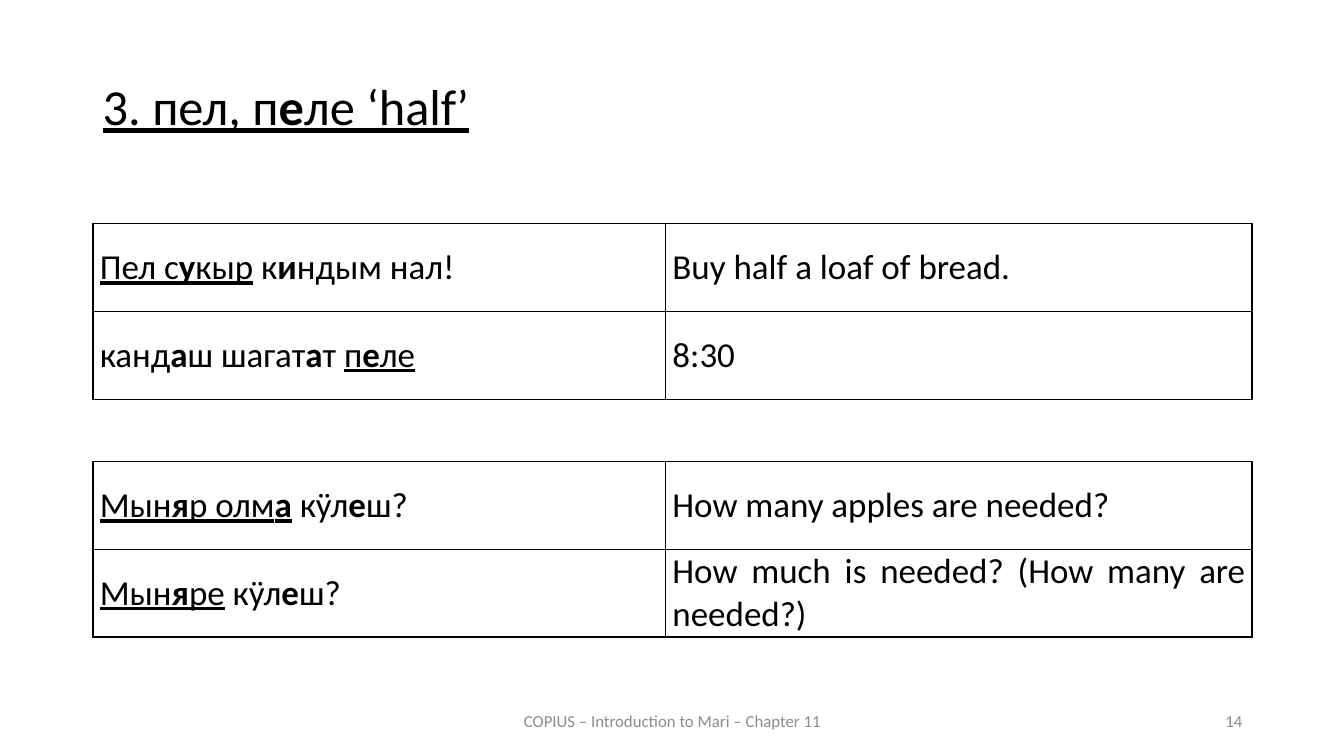
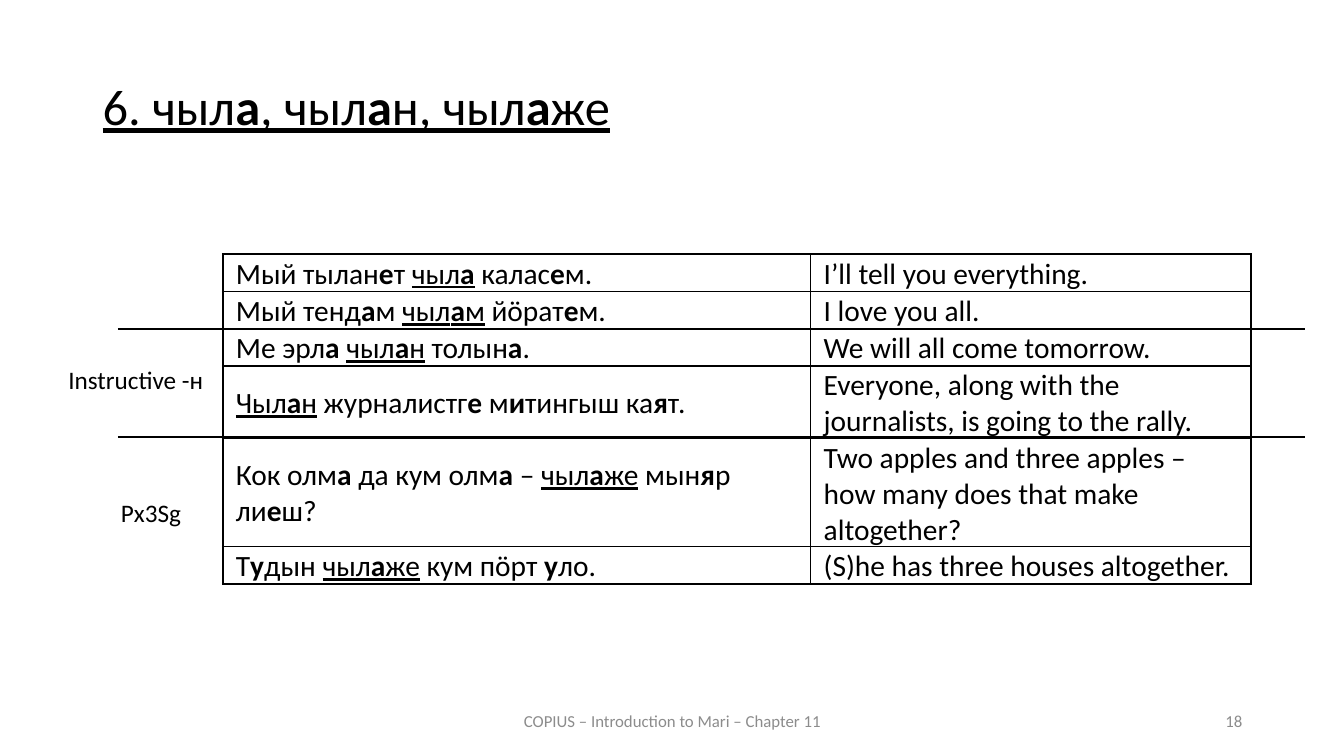
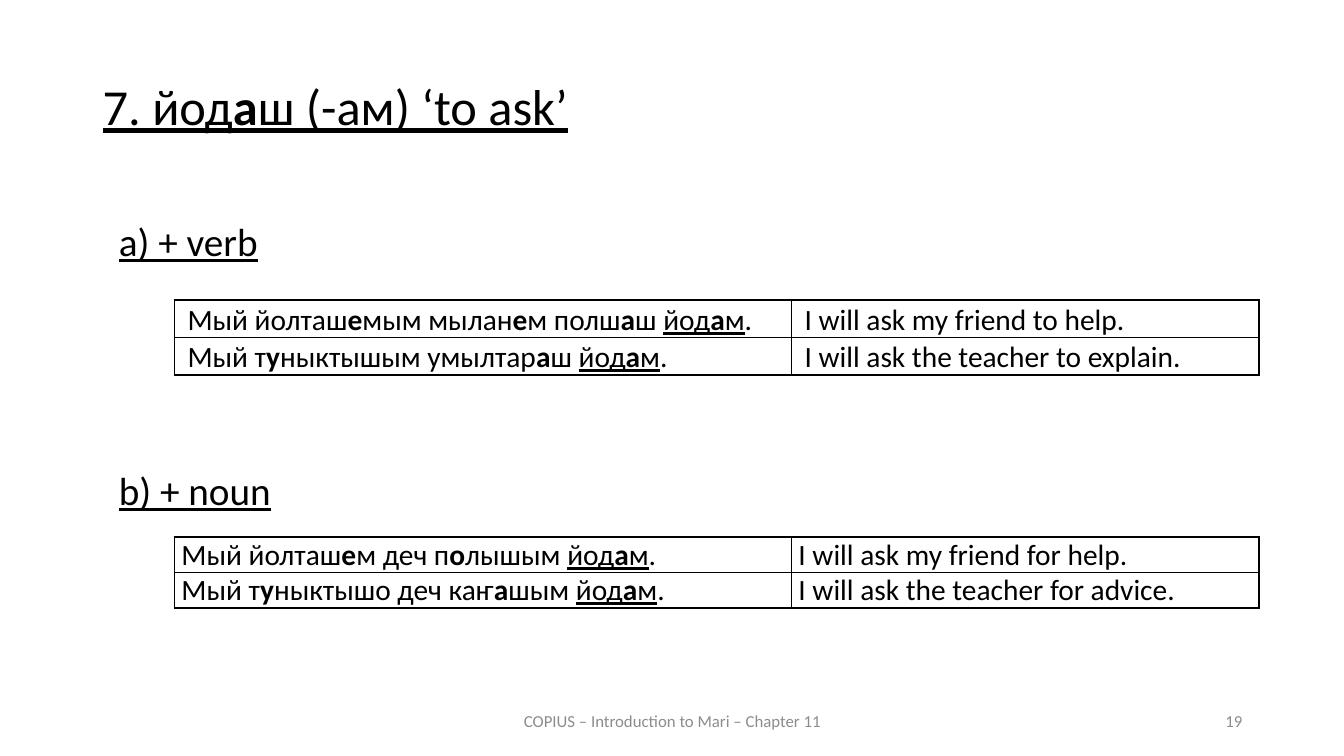
from lxml import etree
from pptx import Presentation
from pptx import util as u
from pptx.dml.color import RGBColor
from pptx.enum import shapes, text
from pptx.oxml.ns import qn

PX = 9144  # 100 px to the inch
FONT = "Calibri"
COLORS = {"ink": "000000", "footer": "8C8C8C"}
FOOTER = "COPIUS – Introduction to Mari – Chapter 11"
LEFT, CENTER, RIGHT, JUSTIFY = (
    text.PP_ALIGN.LEFT, text.PP_ALIGN.CENTER, text.PP_ALIGN.RIGHT, text.PP_ALIGN.JUSTIFY)
THIN, THICK = 1, 1.5

# Table styles: text size, cell margins (left/right, top), alignment
ROOMY = {"size": 25, "margins": (7, 0), "align": JUSTIFY}
COMPACT = {"size": 21, "margins": (13, 2), "align": LEFT}
TIGHT = {"size": 21, "margins": (7, 0), "align": LEFT}

# Content: *stressed vowel in bold*, _underlined_
SLIDES = [
    {
        "number": 14,
        "title": "_3. пел, п*е*ле ‘half’_",
        "tables": [
            {"at": (92, 222), "columns": (568, 582), "row": 87, "style": ROOMY, "heavy": (),
             "rows": [("_Пел с*у*кыр_ к*и*ндым нал!", "Buy half a loaf of bread."),
                      ("канд*а*ш шагат*а*т _п*е*ле_", "8:30")]},
            {"at": (92, 458), "columns": (568, 582), "row": 87, "style": ROOMY, "heavy": (),
             "rows": [("_Мын*я*р олм*а*_ кӱл*е*ш?", "How many apples are needed?"),
                      ("_Мын*я*ре_ кӱл*е*ш?", "How much is needed? (How many are needed?)")]},
        ],
    },
    {
        "number": 18,
        "title": "_6. чыл*а*, чыл*а*н, чыл*а*же_",
        "tables": [
            {"at": (221, 252), "columns": (583, 437), "row": 36, "style": COMPACT,
             "heavy": (0, 2, 4, 6),
             "rows": [
                 ("Мый тылан*е*т _чыл*а*_ калас*е*м.", "I’ll tell you everything."),
                 ("Мый тенд*а*м _чыл*а*м_ йӧрат*е*м.", "I love you all."),
                 ("Ме эрл*а* _чыл*а*н_ толын*а*.", "We will all come tomorrow."),
                 ("_Чыл*а*н_ журналистг*е* м*и*тингыш ка*я*т.",
                  "Everyone, along with the journalists, is going to the rally."),
                 ("Кок олм*а* да кум олм*а* – _чыл*а*же_ мын*я*р ли*е*ш?",
                  "Two apples and three apples – how many does that make altogether?"),
                 ("Т*у*дын _чыл*а*же_ кум пӧрт *у*ло.", "(S)he has three houses altogether."),
             ]},
        ],
        "dividers": (326, 434),
        "labels": [("Px3Sg", (110, 488, 82, 40)), ("Instructive -н", (58, 357, 163, 40))],
    },
    {
        "number": 19,
        "title": "_7. йод*а*ш (-ам) ‘to ask’_",
        "headings": [("_a) + verb_", 216), ("_b) + noun_", 463)],
        "tables": [
            {"at": (173, 298), "columns": (612, 464), "row": 36, "style": COMPACT, "heavy": (0, 2),
             "rows": [("Мый йолташ*е*мым мылан*е*м полш*а*ш _йод*а*м_.",
                       "I will ask my friend to help."),
                      ("Мый т*у*ныктышым умылтар*а*ш _йод*а*м_.",
                       "I will ask the teacher to explain.")]},
            {"at": (173, 533), "columns": (612, 464), "row": 35, "style": TIGHT, "heavy": (0, 2),
             "rows": [("Мый йолташ*е*м деч п*о*лышым _йод*а*м_.",
                       "I will ask my friend for help."),
                      ("Мый т*у*ныктышо деч каҥ*а*шым _йод*а*м_.",
                       "I will ask the teacher for advice.")]},
        ],
    },
]


def px(*lengths):
    return [u.Emu(length * PX) for length in lengths]


def write(paragraph, marked, size, color="ink", align=LEFT):
    """Turn * and _ marks into bold and underlined runs."""
    paragraph.alignment = align
    for i, underlined in enumerate(marked.split("_")):
        for j, words in enumerate(underlined.split("*")):
            if not words:
                continue
            run = paragraph.add_run()
            run.text = words
            font = run.font
            font.name, font.size = FONT, u.Pt(size)
            font.bold, font.underline = j % 2 == 1, i % 2 == 1
            font.color.rgb = RGBColor.from_string(COLORS[color])


def add_text(slide, marked, box, size, color="ink", align=LEFT,
             anchor=text.MSO_ANCHOR.TOP, before=None, wrap=True):
    frame = slide.shapes.add_textbox(*px(*box)).text_frame
    frame.word_wrap = wrap
    frame.vertical_anchor = anchor
    paragraph = frame.paragraphs[0]
    write(paragraph, marked, size, color, align)
    if before is not None:
        paragraph.space_before, paragraph.line_spacing = u.Pt(before), 0.9


def set_borders(cell, widths):
    properties = cell._tc.get_or_add_tcPr()
    for index, (side, width) in enumerate(zip("LRTB", widths)):
        line = etree.Element(qn(f"a:ln{side}"), w=str(u.Pt(width)))
        fill = etree.SubElement(line, qn("a:solidFill"))
        etree.SubElement(fill, qn("a:srgbClr"), val=COLORS["ink"])
        properties.insert(index, line)


def add_examples(slide, at, columns, row, style, heavy, rows):
    box = px(*at, sum(columns), row * len(rows))
    table = slide.shapes.add_table(len(rows), len(columns), *box).table
    table.first_row = table.horz_banding = False
    for column, width in zip(table.columns, px(*columns)):
        column.width = width
    side, top = px(*style["margins"])
    edges = [THICK if edge in heavy else THIN for edge in range(len(rows) + 1)]
    uprights = [THICK, THIN, THICK]
    for r, sentences in enumerate(rows):
        for c, sentence in enumerate(sentences):
            cell = table.cell(r, c)
            cell.fill.background()
            cell.margin_left = cell.margin_right = side
            cell.margin_top, cell.margin_bottom = top, 0
            cell.vertical_anchor = text.MSO_ANCHOR.MIDDLE
            write(cell.text_frame.paragraphs[0], sentence, style["size"], align=style["align"])
            set_borders(cell, (*uprights[c:c + 2], *edges[r:r + 2]))


def add_divider(slide, y):
    line = slide.shapes.add_connector(shapes.MSO_CONNECTOR.STRAIGHT, *px(117, y, 1294, y))
    line.line.color.rgb = RGBColor.from_string(COLORS["ink"])
    line.line.width = u.Pt(THICK)
    etree.SubElement(line._element.spPr, qn("a:effectLst"))


def build_slide(presentation, content):
    slide = presentation.slides.add_slide(presentation.slide_layouts[6])
    # Title and footer
    add_text(slide, content["title"], (92, 76, 1150, 99), 36, align=JUSTIFY, before=12)
    for words, box, align in ((FOOTER, (442, 695, 450, 40), CENTER),
                              (str(content["number"]), (942, 695, 300, 40), RIGHT)):
        add_text(slide, words, box, 12, "footer", align, text.MSO_ANCHOR.MIDDLE)
    # Example sentences
    for heading, y in content.get("headings", ()):
        add_text(slide, heading, (108, y, 1150, 70), 28, before=10)
    for table in content["tables"]:
        add_examples(slide, **table)
    # Grouping of table rows
    for y in content.get("dividers", ()):
        add_divider(slide, y)
    for label, box in content.get("labels", ()):
        add_text(slide, label, box, 18, wrap=False)


def main():
    presentation = Presentation()
    presentation.slide_width, presentation.slide_height = px(1333, 750)
    for content in SLIDES:
        build_slide(presentation, content)
    presentation.save("out.pptx")


if __name__ == "__main__":
    main()
